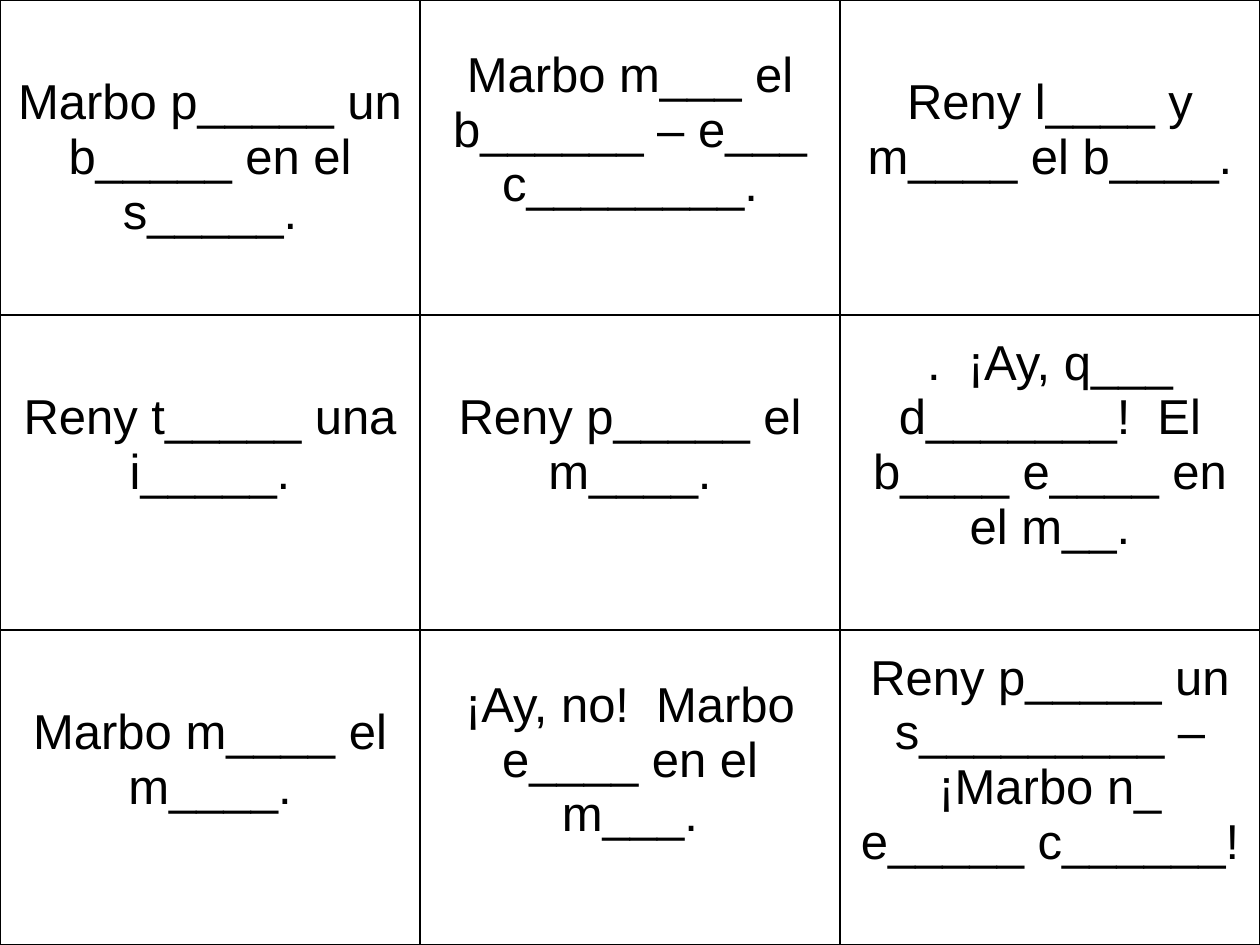
from dataclasses import dataclass

from lxml import etree
from pptx import Presentation, util as u
from pptx.dml import color
from pptx.enum import text
from pptx.oxml import ns

COLORS = {"ink": "000000", "paper": "FFFFFF"}
WIDTH, HEIGHT = u.Pt(720), u.Pt(540)
COLUMNS = 3
MARGIN = 3.6
LINE_HEIGHT = 31.3


@dataclass
class Card:
    sentence: str
    space_below: float = LINE_HEIGHT


CARDS = [
    Card("Marbo p_____ un b_____ en el s_____.", space_below=0),
    Card("Marbo m___ el b______ – e___ c________."),
    Card("Reny l____ y m____ el b____."),
    Card("Reny t_____ una i_____."),
    Card("Reny p_____ el m____."),
    Card(".  ¡Ay, q___ d_______!  El b____ e____ en el m__."),
    Card("Marbo m____ el m____."),
    Card("¡Ay, no!  Marbo e____ en el m___."),
    Card("Reny p_____ un s_________ – ¡Marbo n_ e_____ c______!"),
]


def write(tf, content: str, *, size: float = 28, font: str = "Arial",
          ink: str = "ink", align=text.PP_ALIGN.CENTER) -> None:
    p = tf.paragraphs[0]
    p.alignment = align
    r = p.add_run()
    r.text = content
    r.font.size = u.Pt(size)
    r.font.name = font
    r.font.color.rgb = color.RGBColor.from_string(COLORS[ink])


def add_borders(cell, width: float = 1) -> None:
    """Outline all four sides; border elements must precede the fill."""
    props = cell._tc.get_or_add_tcPr()
    for i, side in enumerate(("lnL", "lnR", "lnT", "lnB")):
        ln = etree.Element(ns.qn(f"a:{side}"), w=str(u.Pt(width)))
        fill = etree.SubElement(ln, ns.qn("a:solidFill"))
        etree.SubElement(fill, ns.qn("a:srgbClr"), val=COLORS["ink"])
        props.insert(i, ln)


def draw_card(cell, card: Card) -> None:
    cell.fill.solid()
    cell.fill.fore_color.rgb = color.RGBColor.from_string(COLORS["paper"])
    cell.vertical_anchor = text.MSO_ANCHOR.MIDDLE
    cell.margin_top = u.Pt(MARGIN)
    cell.margin_bottom = u.Pt(MARGIN + card.space_below)
    write(cell.text_frame, card.sentence)
    add_borders(cell)


def main() -> None:
    prs = Presentation()
    prs.slide_width, prs.slide_height = WIDTH, HEIGHT
    s = prs.slides.add_slide(prs.slide_layouts[6])
    table = s.shapes.add_table(len(CARDS) // COLUMNS, COLUMNS,
                               u.Pt(0), u.Pt(0), WIDTH, HEIGHT).table
    table.first_row = table.horz_banding = False
    for i, card in enumerate(CARDS):
        draw_card(table.cell(*divmod(i, COLUMNS)), card)
    prs.save("out.pptx")


if __name__ == "__main__":
    main()
